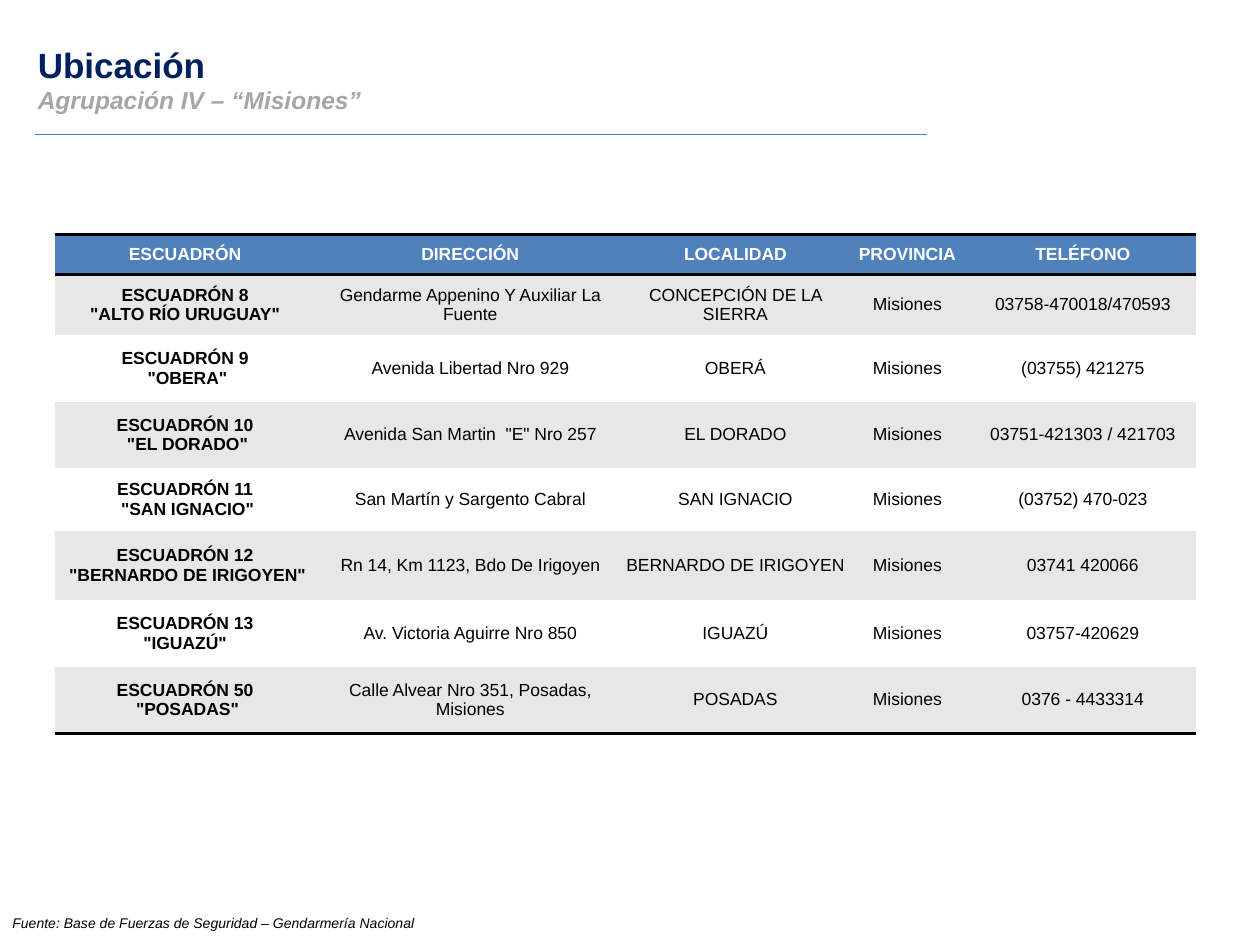
from pptx import Presentation
from pptx.dml.color import RGBColor
from pptx.enum.shapes import MSO_CONNECTOR
from pptx.enum.text import MSO_ANCHOR, PP_ALIGN
from pptx.oxml import parse_xml
from pptx.oxml.ns import nsdecls
from pptx.util import Pt

rgb = RGBColor.from_string


def write(p, text, size=10, color="000000", bold=False, italic=False, align=PP_ALIGN.LEFT):
    p.alignment = align
    r = p.add_run()
    r.text = text
    f = r.font
    f.name, f.size, f.bold, f.italic = "Arial", Pt(size), bold, italic
    f.color.rgb = rgb(color)


def add_border(cell, tag):
    cell._tc.get_or_add_tcPr().insert(0, parse_xml(
        f'<a:{tag} {nsdecls("a")} w="{Pt(2)}"><a:solidFill>'
        f'<a:srgbClr val="000000"/></a:solidFill></a:{tag}>'))


prs = Presentation()
prs.slide_width, prs.slide_height = Pt(720), Pt(540)
s = prs.slides.add_slide(prs.slide_layouts[5])

# Title and subtitle
title = s.shapes.title
title.left, title.top, title.width, title.height = Pt(14.4), Pt(21), Pt(471), Pt(48)
tf = title.text_frame
tf.word_wrap = True
tf.vertical_anchor = MSO_ANCHOR.TOP
write(tf.paragraphs[0], "Ubicación", size=20, color="002060", bold=True)
write(tf.add_paragraph(), "Agrupación IV – “Misiones”", size=14, color="A6A6A6",
      bold=True, italic=True)
for p in tf.paragraphs:
    p.space_before = Pt(0)

# Source note
note = s.shapes.add_textbox(Pt(0), Pt(519), Pt(601), Pt(17))
note.text_frame.word_wrap = True
write(note.text_frame.paragraphs[0],
      "Fuente: Base de Fuerzas de Seguridad – Gendarmería Nacional", size=8, italic=True)

# Rule under the title
rule = s.shapes.add_connector(MSO_CONNECTOR.STRAIGHT, Pt(20), Pt(77), Pt(530), Pt(77))
rule.line.color.rgb = rgb("4B7EBC")
rule.line.width = Pt(0.75)
rule._element.spPr.append(parse_xml(f'<a:effectLst {nsdecls("a")}/>'))

# Table of squadrons
rows = [
    ("ESCUADRÓN", "DIRECCIÓN", "LOCALIDAD", "PROVINCIA", "TELÉFONO"),
    ('ESCUADRÓN 8\n"ALTO RÍO URUGUAY"', "Gendarme Appenino Y Auxiliar La Fuente",
     "CONCEPCIÓN DE LA SIERRA", "Misiones", "03758-470018/470593"),
    ('ESCUADRÓN 9\n "OBERA"', "Avenida Libertad Nro 929", "OBERÁ", "Misiones",
     "(03755) 421275"),
    ('ESCUADRÓN 10\n "EL DORADO"', 'Avenida San Martin  "E" Nro 257', "EL DORADO",
     "Misiones", "03751-421303 / 421703"),
    ('ESCUADRÓN 11\n "SAN IGNACIO"', "San Martín y Sargento Cabral", "SAN IGNACIO",
     "Misiones", "(03752) 470-023"),
    ('ESCUADRÓN 12\n "BERNARDO DE IRIGOYEN"', "Rn 14, Km 1123, Bdo De Irigoyen",
     "BERNARDO DE IRIGOYEN", "Misiones", "03741 420066"),
    ('ESCUADRÓN 13\n"IGUAZÚ"', "Av. Victoria Aguirre Nro 850", "IGUAZÚ", "Misiones",
     "03757-420629"),
    ('ESCUADRÓN 50\n "POSADAS"', "Calle Alvear Nro 351, Posadas, Misiones", "POSADAS",
     "Misiones", "0376 - 4433314"),
]
col_widths = [149, 177, 126, 70.5, 130]
row_heights = [23, 34.5, 38, 38, 36, 39.5, 38, 38]
table = s.shapes.add_table(len(rows), len(col_widths), Pt(31.2), Pt(134),
                           Pt(sum(col_widths)), Pt(sum(row_heights))).table
table._tbl.tblPr[0].text = "{2D5ABB26-0587-4C30-8999-92F81FD0307C}"  # no style, no grid
for col, width in zip(table.columns, col_widths):
    col.width = Pt(width)
for row, height in zip(table.rows, row_heights):
    row.height = Pt(height)

for i, values in enumerate(rows):
    header = i == 0
    for j, value in enumerate(values):
        cell = table.cell(i, j)
        cell.vertical_anchor = MSO_ANCHOR.MIDDLE
        cell.fill.solid()
        cell.fill.fore_color.rgb = rgb("4F81BD" if header else "E7E7E7" if i % 2 else "FFFFFF")
        if not header:
            cell.margin_left = cell.margin_right = cell.margin_top = cell.margin_bottom = 0
        if header or i == len(rows) - 1:
            add_border(cell, "lnB")
        if header:
            add_border(cell, "lnT")
        tf = cell.text_frame
        for k, text in enumerate(value.split("\n")):
            p = tf.add_paragraph() if k else tf.paragraphs[0]
            write(p, text, color="FFFFFF" if header else "000000",
                  bold=header or j == 0, align=PP_ALIGN.CENTER)

prs.save("out.pptx")
